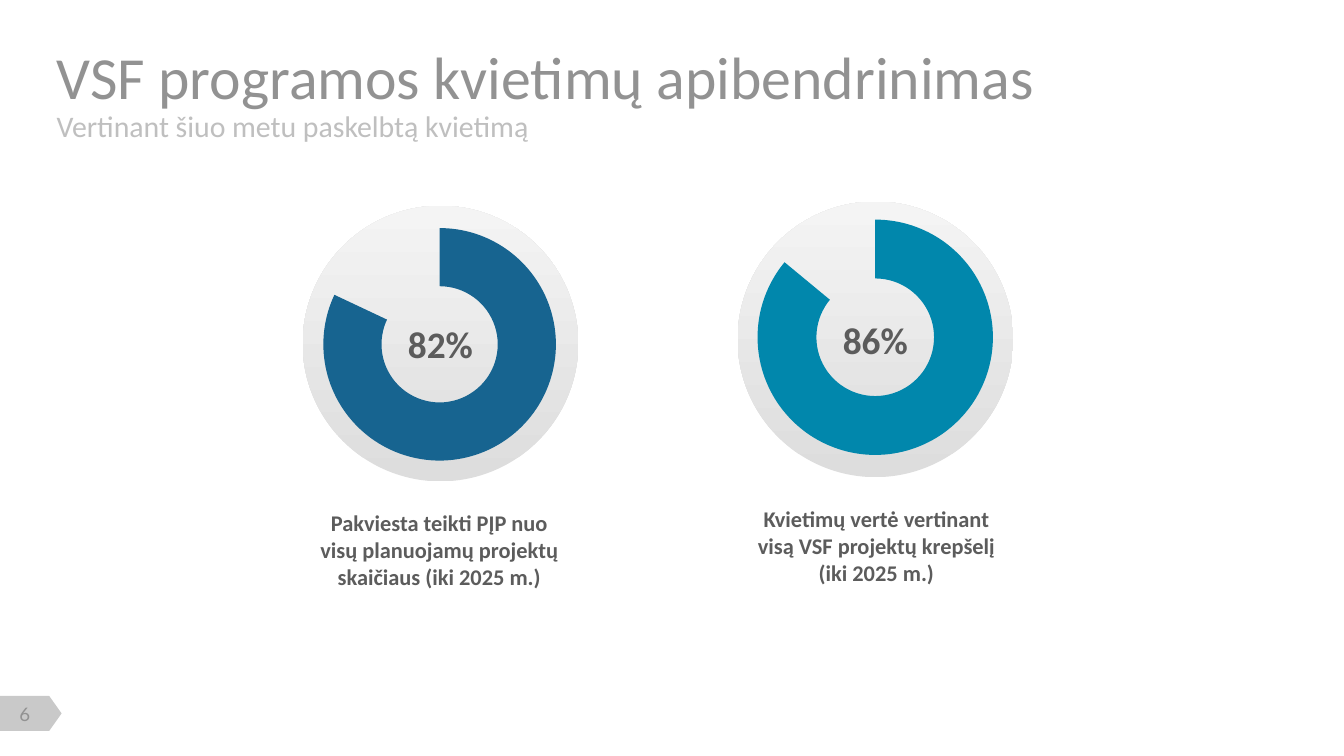
from dataclasses import dataclass

from lxml.etree import SubElement
from pptx import Presentation
from pptx.chart.data import CategoryChartData
from pptx.dml.color import RGBColor
from pptx.enum.chart import XL_CHART_TYPE as ChartType
from pptx.enum.shapes import MSO_SHAPE as Preset
from pptx.enum.text import MSO_ANCHOR as Anchor, MSO_AUTO_SIZE as AutoSize, PP_ALIGN as Align
from pptx.oxml import parse_xml
from pptx.oxml.ns import nsdecls, qn
from pptx.util import Cm, Pt

GREY, DARK, PALE = "929292", "5C5C5C", "BFBFBF"
DISC = 5.21
CAPTION_WIDTH = 4.83
NO_INSETS = (0, 0, 0, 0)


@dataclass
class Gauge:
    """One share of the whole; lengths in centimetres."""
    percent: int
    color: str
    caption: str
    left: float
    disc_top: float
    caption_left: float
    caption_top: float
    chart: tuple[float, float, float]  # top, width, height
    plot: tuple[float, float, float, float]  # x, y, w, h as fractions


GAUGES = [
    Gauge(82, "176490", "Pakviesta teikti PĮP nuo visų planuojamų projektų skaičiaus (iki 2025 m.)",
          5.72, 3.89, 5.89, 9.63, (3.56, 5.21, 5.82), (0.075, 0.129, 0.844, 0.756)),
    Gauge(86, "0187AC", "Kvietimų vertė vertinant visą VSF projektų krepšelį (iki 2025 m.)",
          13.94, 3.81, 14.15, 9.55, (3.45, 5.31, 5.79), (0.071, 0.11, 0.838, 0.791)),
]


def rgb(value: str) -> RGBColor:
    return RGBColor.from_string(value)


def place(shape, left: float, top: float, width: float, height: float) -> None:
    box = {"left": left, "top": top, "width": width, "height": height}
    for name, length in box.items():
        setattr(shape, name, Cm(length))


def write(shape, text: str, size: int, color: str, bold: bool = False, font: str = "Calibri",
          align=Align.CENTER, anchor=Anchor.MIDDLE, insets=NO_INSETS, wrap: bool = True):
    frame = shape.text_frame
    frame.text = text
    frame_format = {"auto_size": AutoSize.NONE, "word_wrap": wrap, "vertical_anchor": anchor}
    sides = ("margin_left", "margin_top", "margin_right", "margin_bottom")
    frame_format.update(zip(sides, map(Cm, insets)))
    for name, value in frame_format.items():
        setattr(frame, name, value)
    paragraph = frame.paragraphs[0]
    paragraph.alignment = align
    run_font = paragraph.runs[0].font
    for name, value in {"name": font, "size": Pt(size), "bold": bold}.items():
        setattr(run_font, name, value)
    run_font.color.rgb = rgb(color)
    return paragraph


def add_preset(slide, preset, left: float, top: float, width: float, height: float):
    shape = slide.shapes.add_shape(preset, Cm(left), Cm(top), Cm(width), Cm(height))
    shape.shadow.inherit = False
    shape.line.fill.background()
    return shape


def add_text(slide, left: float, top: float, width: float, height: float, text: str, **style):
    box = slide.shapes.add_textbox(Cm(left), Cm(top), Cm(width), Cm(height))
    write(box, text, **style)


def add_disc(slide, gauge: Gauge) -> None:
    disc = add_preset(slide, Preset.OVAL, gauge.left, gauge.disc_top, DISC, DISC)
    disc.fill.gradient()
    disc.fill.gradient_angle = 90
    for stop, color in zip(disc.fill.gradient_stops, ("DDDDDD", "F4F4F4")):
        stop.color.rgb = rgb(color)
    for stop, position in zip(disc.fill.gradient_stops, (0, 1)):
        stop.position = position
    write(disc, f"{gauge.percent}%", 20, DARK, bold=True)


def add_ring(slide, gauge: Gauge) -> None:
    data = CategoryChartData()
    data.categories = ["1", "2"]
    data.add_series("Series 1", (gauge.percent, 100 - gauge.percent))
    top, width, height = gauge.chart
    chart = slide.shapes.add_chart(ChartType.DOUGHNUT, Cm(gauge.left), Cm(top),
                                   Cm(width), Cm(height), data).chart
    chart.has_legend = False
    chart.has_title = False
    chart.font.name, chart.font.size = "Calibri", Pt(18)
    chart.font.color.rgb = rgb("262626")
    plot = chart.plots[0]
    plot.vary_by_categories = False
    share, rest = (plot.series[0].points[i].format for i in range(2))
    share.fill.solid()
    share.fill.fore_color.rgb = rgb(gauge.color)
    rest.fill.background()
    for part in (share, rest):
        part.line.fill.background()

    # Hole size and the inner plot area
    area = chart._chartSpace.chart.plotArea
    area.find(qn("c:doughnutChart")).find(qn("c:holeSize")).set("val", "64")
    for old in area.findall(qn("c:layout")):
        area.remove(old)
    layout = parse_xml(f"<c:layout {nsdecls('c')}/>")
    manual = SubElement(layout, qn("c:manualLayout"))
    settings = {"layoutTarget": "inner", "xMode": "edge", "yMode": "edge"}
    settings.update(zip("xywh", gauge.plot))
    for tag, value in settings.items():
        SubElement(manual, qn(f"c:{tag}")).set("val", str(value))
    area.insert(0, layout)


def main() -> None:
    deck = Presentation()
    deck.slide_width, deck.slide_height = Cm(25.4), Cm(14.29)
    slide = deck.slides.add_slide(deck.slide_layouts[1])

    # Title and subtitle
    title, subtitle = slide.placeholders
    place(title, 1.07, 0.94, 23.24, 0.99)
    write(title, "VSF programos kvietimų apibendrinimas", 32, GREY,
          align=Align.LEFT, insets=(0, 0.13, 0.25, 0.13))
    place(subtitle, 1.07, 2.13, 23.19, 0.48)
    line = write(subtitle, "Vertinant šiuo metu paskelbtą kvietimą", 16, PALE,
                 align=Align.LEFT, wrap=False)
    line.space_before = Pt(0)
    properties = line._p.get_or_add_pPr()
    for name in ("marL", "indent"):
        properties.set(name, "0")
    SubElement(properties, qn("a:buNone"))

    # Page number tab
    tab = add_preset(slide, Preset.FLOWCHART_OFFPAGE_CONNECTOR, 0.25, 12.9, 0.66, 1.17)
    tab.rotation = 270
    tab.fill.solid()
    tab.fill.fore_color.rgb = rgb("C9C9C9")
    add_text(slide, 0.05, 13.28, 0.84, 0.43, "6", size=10, color=GREY, font="Lato")

    # Gauges with captions
    for gauge in GAUGES:
        add_disc(slide, gauge)
        add_ring(slide, gauge)
        add_text(slide, gauge.caption_left, gauge.caption_top, CAPTION_WIDTH, 1.55,
                 gauge.caption, size=12, color=DARK, bold=True, anchor=Anchor.TOP)

    deck.save("out.pptx")


if __name__ == "__main__":
    main()
